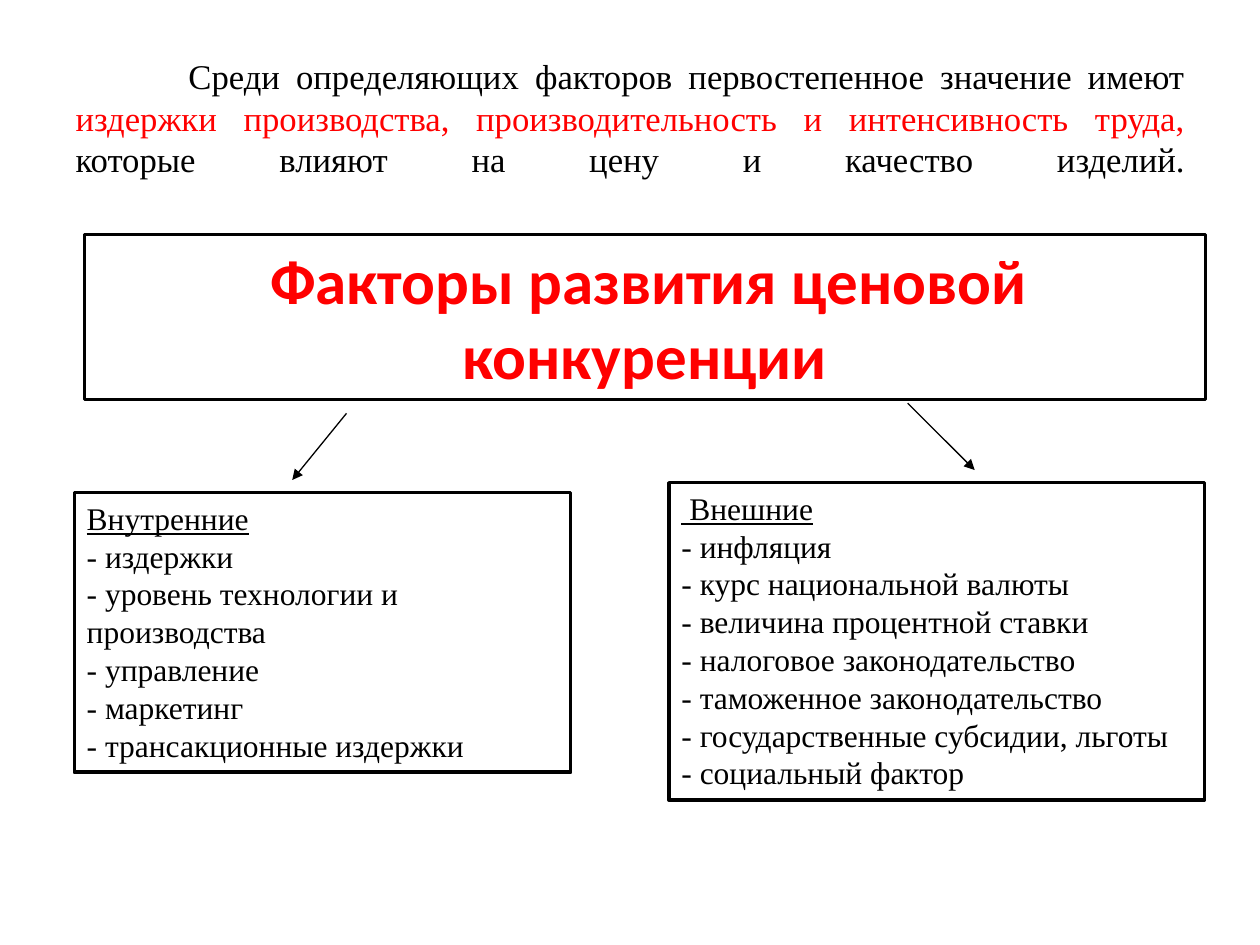
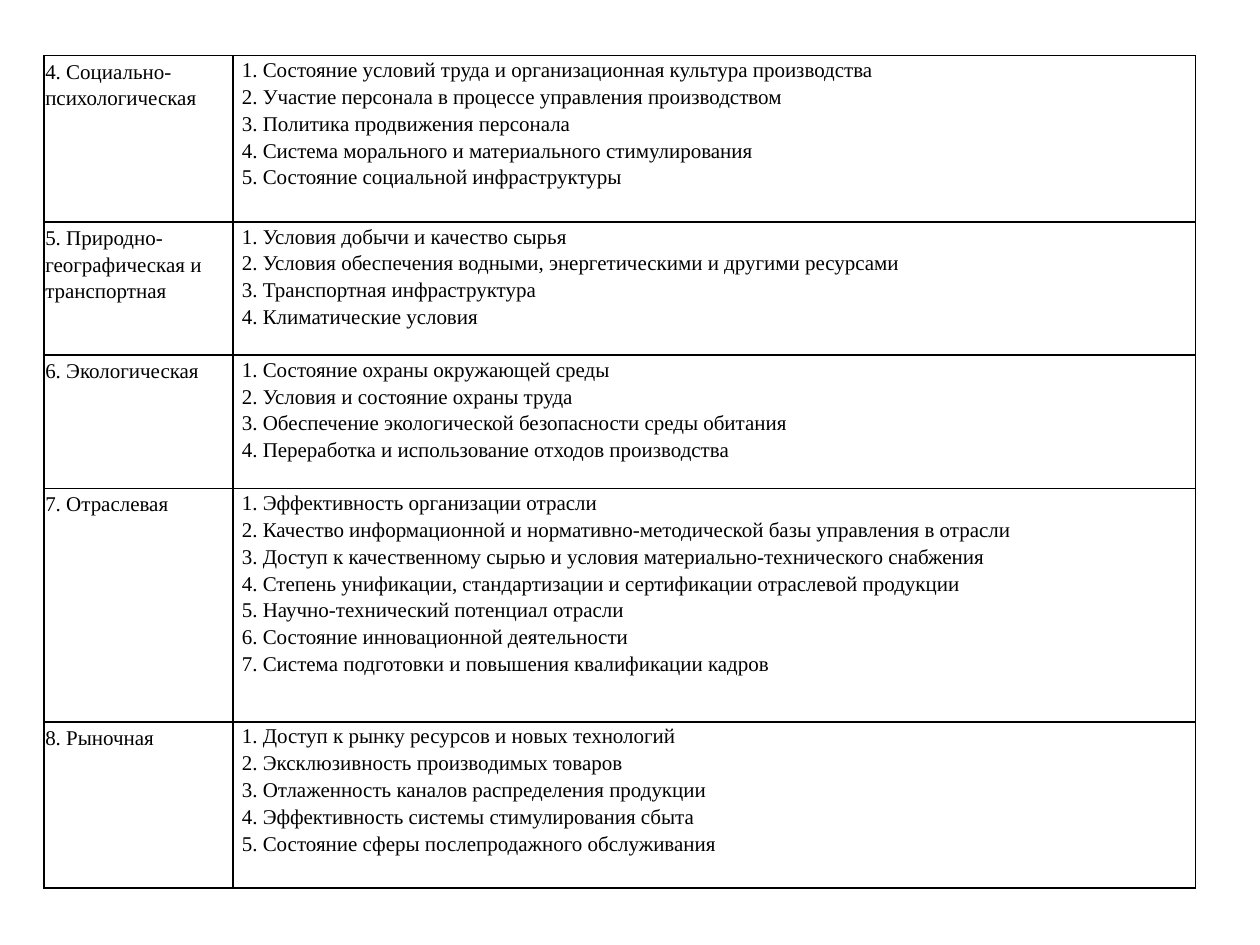
from lxml import etree
from pptx import Presentation
from pptx.dml.color import RGBColor
from pptx.enum.shapes import MSO_CONNECTOR, MSO_SHAPE
from pptx.enum.text import MSO_ANCHOR, MSO_AUTO_SIZE, PP_ALIGN
from pptx.oxml.ns import qn
from pptx.util import Pt

STRAIGHT, RECT = MSO_CONNECTOR.STRAIGHT, MSO_SHAPE.RECTANGLE
TOP, MIDDLE = MSO_ANCHOR.TOP, MSO_ANCHOR.MIDDLE
LEFT, CENTER, JUSTIFY = PP_ALIGN.LEFT, PP_ALIGN.CENTER, PP_ALIGN.JUSTIFY
NO_FIT = MSO_AUTO_SIZE.NONE

BLACK = RGBColor(0, 0, 0)
WHITE = RGBColor(255, 255, 255)
RED = RGBColor(255, 0, 0)
SERIF, SANS = "Times New Roman", "Calibri"
TITLE_ONLY, BLANK = 5, 6

INTERNAL = ["Внутренние", "- издержки", "- уровень технологии и", "производства",
            "- управление", "- маркетинг", "- трансакционные издержки"]
EXTERNAL = [" Внешние", "- инфляция", "- курс национальной валюты",
            "- величина процентной ставки", "- налоговое законодательство",
            "- таможенное законодательство", "- государственные субсидии, льготы",
            "- социальный фактор"]

# Group name, row height, factors
GROUPS = [
    ("4. Социально-психологическая", 95, [
        "Состояние условий труда и организационная культура производства",
        "Участие персонала в процессе управления производством",
        "Политика продвижения персонала",
        "Система морального и материального стимулирования",
        "Состояние социальной инфраструктуры"]),
    ("5. Природно-географическая и транспортная", 76.2, [
        "Условия добычи и качество сырья",
        "Условия обеспечения водными, энергетическими и другими ресурсами",
        "Транспортная инфраструктура",
        "Климатические условия"]),
    ("6. Экологическая", 76.2, [
        "Состояние охраны окружающей среды",
        "Условия и состояние охраны труда",
        "Обеспечение экологической безопасности среды обитания",
        "Переработка и использование отходов производства"]),
    ("7. Отраслевая", 133.3, [
        "Эффективность организации отрасли",
        "Качество информационной и нормативно-методической базы управления в отрасли",
        "Доступ к качественному сырью и условия материально-технического снабжения",
        "Степень унификации, стандартизации и сертификации отраслевой продукции",
        "Научно-технический потенциал отрасли",
        "Состояние инновационной деятельности",
        "Система подготовки и повышения квалификации кадров"]),
    ("8. Рыночная", 95, [
        "Доступ к рынку ресурсов и новых технологий",
        "Эксклюзивность производимых товаров",
        "Отлаженность каналов распределения продукции",
        "Эффективность системы стимулирования сбыта",
        "Состояние сферы послепродажного обслуживания"]),
]


def add_run(p, text, size=18, font=SERIF, color=BLACK, bold=False, underline=False):
    r = p.add_run()
    r.text = text
    r.font.size, r.font.name = Pt(size), font
    r.font.color.rgb = color
    r.font.bold, r.font.underline = bold, underline


def write_lines(tf, lines, spacing, underline_first=False, **fmt):
    """Write one left-aligned paragraph per line."""
    for i, line in enumerate(lines):
        p = tf.add_paragraph() if i else tf.paragraphs[0]
        p.alignment, p.line_spacing = LEFT, spacing
        add_run(p, line, underline=underline_first and i == 0, **fmt)


def add_title(slide, x, y, w, h):
    sp = slide.shapes.title
    sp.left, sp.top, sp.width, sp.height = Pt(x), Pt(y), Pt(w), Pt(h)
    tf = sp.text_frame
    tf.auto_size, tf.vertical_anchor, tf.margin_top = NO_FIT, TOP, 0
    p = tf.paragraphs[0]
    p.alignment, p.line_spacing = JUSTIFY, Pt(23.7)
    pPr = p._p.get_or_add_pPr()
    pPr.set("marL", "0")
    pPr.set("indent", str(Pt(64.5)))
    for text, color in [
            ("Среди определяющих факторов первостепенное значение имеют ", BLACK),
            ("издержки производства, производительность и интенсивность труда, ", RED),
            ("которые влияют на цену и качество изделий.", BLACK)]:
        add_run(p, text, size=19.8, color=color)
    p.add_line_break()  # stretches the last line to the full width


def add_box(slide, x, y, w, h, anchor=TOP):
    sp = slide.shapes.add_shape(RECT, Pt(x), Pt(y), Pt(w), Pt(h))
    sp.shadow.inherit = False
    sp.fill.solid()
    sp.fill.fore_color.rgb = WHITE
    sp.line.color.rgb, sp.line.width = BLACK, Pt(2)
    tf = sp.text_frame
    tf.word_wrap, tf.vertical_anchor = True, anchor
    return tf


def add_headline(slide, x, y, w, h):
    p = add_box(slide, x, y, w, h, MIDDLE).paragraphs[0]
    p.alignment = CENTER
    add_run(p, " ", font=SANS, bold=True)
    add_run(p, "Факторы развития ценовой конкуренции",
            size=36, font=SANS, color=RED, bold=True)


def add_factor_box(slide, lines, x, y, w, h):
    write_lines(add_box(slide, x, y, w, h), lines, Pt(21.6), underline_first=True)


def add_arrow(slide, x1, y1, x2, y2):
    line = slide.shapes.add_connector(STRAIGHT, Pt(x1), Pt(y1), Pt(x2), Pt(y2))
    line.line.color.rgb, line.line.width = BLACK, Pt(0.75)
    etree.SubElement(line.line._get_or_add_ln(), qn("a:tailEnd"), type="triangle")
    etree.SubElement(line._element.spPr, qn("a:effectLst"))


def format_cell(cell, margin_x, margin_y):
    cell.margin_left = cell.margin_right = Pt(margin_x)
    cell.margin_top = cell.margin_bottom = Pt(margin_y)
    cell.vertical_anchor = TOP
    tcPr = cell._tc.get_or_add_tcPr()
    for side in ("lnL", "lnR", "lnT", "lnB"):
        ln = etree.SubElement(tcPr, qn(f"a:{side}"), w=str(Pt(1)))
        fill = etree.SubElement(ln, qn("a:solidFill"))
        etree.SubElement(fill, qn("a:srgbClr"), val=str(BLACK))
    cell.fill.solid()
    cell.fill.fore_color.rgb = WHITE


def add_group_table(slide, x, y, name_w, factors_w):
    height = sum(h for _, h, _ in GROUPS)
    table = slide.shapes.add_table(len(GROUPS), 2, Pt(x), Pt(y),
                                   Pt(name_w + factors_w), Pt(height)).table
    table.first_row = table.horz_banding = False
    table.columns[0].width, table.columns[1].width = Pt(name_w), Pt(factors_w)
    for row, (name, h, factors) in zip(table.rows, GROUPS):
        row.height = Pt(h)
        name_cell, factor_cell = row.cells
        format_cell(name_cell, 0.7, 0.7)
        format_cell(factor_cell, 5, 0)
        write_lines(name_cell.text_frame, [name], 1.15, size=12)
        numbered = [f"{n}. {factor}" for n, factor in enumerate(factors, 1)]
        write_lines(factor_cell.text_frame, numbered, 1.15, size=12)


def build_factors_slide(prs):
    slide = prs.slides.add_slide(prs.slide_layouts[TITLE_ONLY])
    add_title(slide, 36, 31.7, 648, 80)
    add_headline(slide, 48.2, 133.9, 640.8, 94.3)
    add_factor_box(slide, INTERNAL, 42.5, 281.5, 283.7, 159.8)
    add_factor_box(slide, EXTERNAL, 382.3, 275.8, 306, 181.4)
    add_arrow(slide, 198, 236.2, 167, 274.3)
    add_arrow(slide, 518.7, 230.4, 557, 268.6)


def build_groups_slide(prs):
    slide = prs.slides.add_slide(prs.slide_layouts[BLANK])
    add_group_table(slide, 25.2, 31.8, 108, 550)


def main():
    prs = Presentation()
    prs.slide_width, prs.slide_height = Pt(720), Pt(540)
    build_factors_slide(prs)
    build_groups_slide(prs)
    prs.save("out.pptx")


if __name__ == "__main__":
    main()
